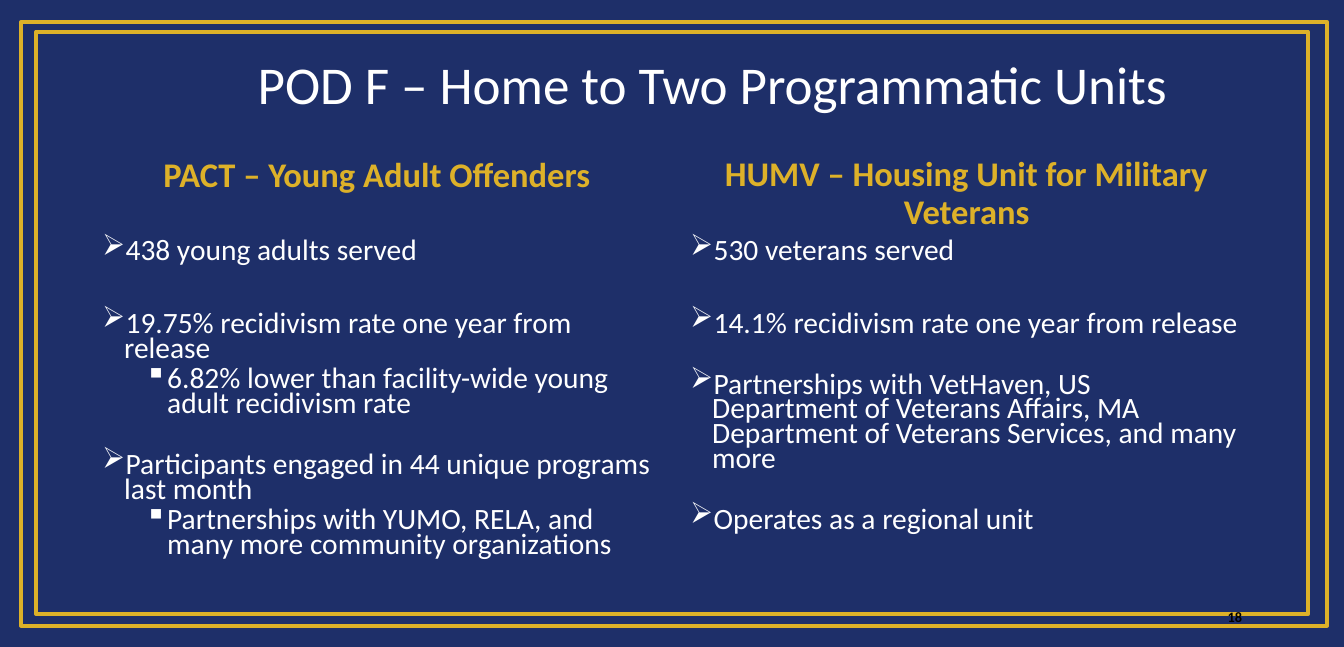
"""Build the slide on the two programmatic units of Pod F."""
from dataclasses import dataclass
from lxml.etree import SubElement
from pptx import Presentation
from pptx.dml.color import RGBColor
from pptx.enum.shapes import MSO_SHAPE
from pptx.enum.text import MSO_ANCHOR, PP_ALIGN
from pptx.oxml.ns import qn
from pptx.util import Emu, Inches, Pt

TITLE = "POD F – Home to Two Programmatic Units"
NUMBER = "18"
UNITS = [
    ("PACT – Young Adult Offenders", [
        (0, 0, "438 young adults served"),
        (0, 36, "19.75% recidivism rate one year from release"),
        (1, 4.5, "6.82% lower than facility-wide young adult recidivism rate"),
        (0, 27, "Participants engaged in 44 unique programs last month"),
        (1, 4.5, "Partnerships with YUMO, RELA, and many more community organizations"),
    ]),
    ("HUMV – Housing Unit for Military Veterans", [
        (0, 0, "530 veterans served"),
        (0, 36, "14.1% recidivism rate one year from release"),
        (0, 27, "Partnerships with VetHaven, US Department of Veterans Affairs, "
                "MA Department of Veterans Services, and many more"),
        (0, 27, "Operates as a regional unit"),
    ]),
]
BULLETS = [("➢", 0.23), ("▪", 0.68)]
HANG = 0.23


@dataclass(frozen=True)
class Theme:
    """Colours, fonts and type sizes."""
    navy: str = "1E2F69"
    gold: str = "DDB129"
    white: str = "FFFFFF"
    black: str = "000000"
    font: str = "Calibri"
    mark: str = "OpenSymbol"
    title: float = 40
    head: float = 26
    body: float = 22.2
    small: float = 10.8


LOOK = Theme()
WIDE, HIGH = Pt(1012), Pt(487)
FRAMES = [(0.38, 0.33, 13.3, 6.09), (0.22, 0.23, 13.66, 6.31)]
LIST_TOP, HEAD_HIGH = 2.47, 0.81
COLUMNS = [
    (0.97, 5.95, 1.6, 3.95, MSO_ANCHOR.TOP),
    (7.12, 5.98, 1.66, 3.63, MSO_ANCHOR.BOTTOM),
]


def add_box(slide, area, lines, size, color, bold=False,
            align=PP_ALIGN.LEFT, anchor=MSO_ANCHOR.TOP, space=1.0):
    """Add a wrapped text box and return its paragraphs."""
    frame = slide.shapes.add_textbox(*map(Inches, area)).text_frame
    frame.word_wrap = True
    frame.vertical_anchor = anchor
    frame.text = "\n".join(lines)
    for para in frame.paragraphs:
        para.alignment = align
        para.line_spacing = space
        for run in para.runs:
            font = run.font
            font.name, font.size, font.bold = LOOK.font, Pt(size), bold
            font.color.rgb = RGBColor.from_string(color)
    return frame.paragraphs


def indent(para, left, hang=0):
    """Set the left margin and hanging indent; return the properties."""
    props = para._p.get_or_add_pPr()
    props.set("marL", str(Inches(left)))
    props.set("indent", str(Emu(-Inches(hang))))
    return props


def add_frame(slide, area):
    """Add a gold outline."""
    rect = slide.shapes.add_shape(MSO_SHAPE.RECTANGLE, *map(Inches, area))
    rect.shadow.inherit = False
    rect.fill.background()
    rect.line.color.rgb = RGBColor.from_string(LOOK.gold)
    rect.line.width = Pt(3)


def add_unit(slide, column, head, items):
    """Add one column with its heading and bulleted list."""
    left, span, top, deep, anchor = column
    add_box(slide, (left, top, span, HEAD_HIGH), [head], LOOK.head, LOOK.gold,
            True, PP_ALIGN.CENTER, anchor, 0.9)
    paras = add_box(slide, (left, LIST_TOP, span, deep),
                    [text for _, _, text in items],
                    LOOK.body, LOOK.white, space=0.7)
    for para, (level, gap, _) in zip(paras, items):
        mark, margin = BULLETS[level]
        para.level = level
        para.space_before = Pt(gap)
        props = indent(para, margin, HANG)
        SubElement(props, qn("a:buFont")).set("typeface", LOOK.mark)
        SubElement(props, qn("a:buChar")).set("char", mark)


def main():
    """Build and save the deck."""
    deck = Presentation()
    deck.slide_width, deck.slide_height = WIDE, HIGH
    slide = deck.slides.add_slide(deck.slide_layouts[6])
    fill = slide.background.fill
    fill.solid()
    fill.fore_color.rgb = RGBColor.from_string(LOOK.navy)
    title = add_box(slide, (0.68, 0.34, 12.64, 1.06), [TITLE], LOOK.title,
                    LOOK.white, align=PP_ALIGN.CENTER, anchor=MSO_ANCHOR.MIDDLE)
    indent(title[0], 0.9)
    for area in FRAMES:
        add_frame(slide, area)
    for column, (head, items) in zip(COLUMNS, UNITS):
        add_unit(slide, column, head, items)
    add_box(slide, (9.93, 6.27, 3.16, 0.36), [NUMBER], LOOK.small, LOOK.black,
            True, PP_ALIGN.RIGHT, MSO_ANCHOR.MIDDLE)
    deck.save("out.pptx")


if __name__ == "__main__":
    main()
